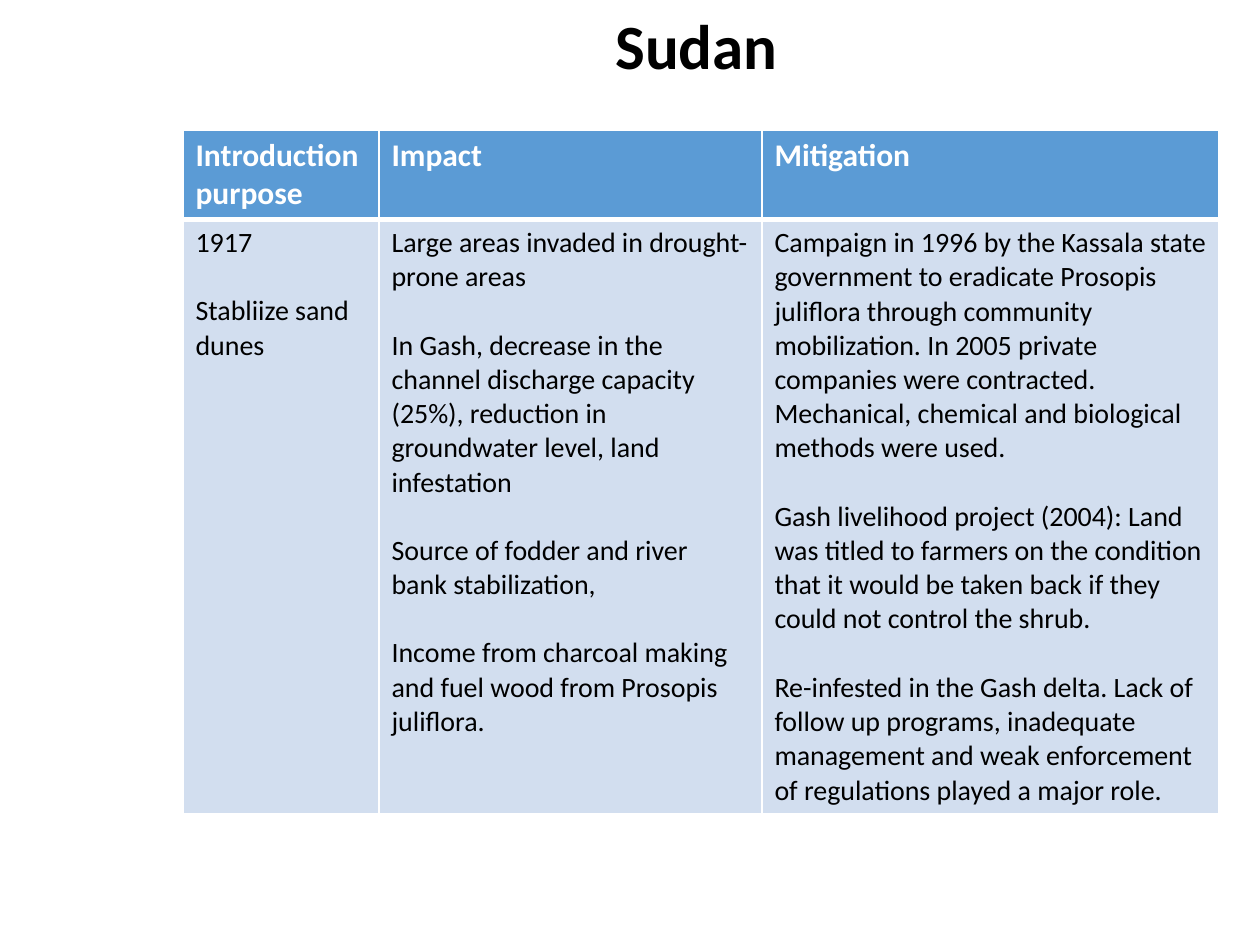
from lxml.etree import SubElement
from pptx import Presentation
from pptx.dml.color import RGBColor
from pptx.enum.text import MSO_ANCHOR as ANCHOR, MSO_AUTO_SIZE as AUTO, PP_ALIGN as ALIGN
from pptx.oxml.ns import qn
from pptx.util import Emu, Pt

PX = 914400 // 126

HEADERS = ["Introduction purpose", "Impact", "Mitigation"]
BODY = [
    ["1917", "Stabliize sand dunes"],
    [
        "Large areas invaded in drought-prone areas",
        "In Gash, decrease in the channel discharge capacity (25%), reduction in "
        "groundwater level, land infestation",
        "Source of fodder and river bank stabilization,",
        "Income from charcoal making and fuel wood from Prosopis juliflora.",
    ],
    [
        "Campaign in 1996 by the Kassala state government to eradicate Prosopis "
        "juliflora through community mobilization. In 2005 private companies were "
        "contracted. Mechanical, chemical and biological methods were used.",
        "Gash livelihood project (2004): Land was titled to farmers on the condition "
        "that it would be taken back if they could not control the shrub.",
        "Re-infested in the Gash delta. Lack of follow up programs, inadequate "
        "management and weak enforcement of regulations played a major role.",
    ],
]


def px(n):
    return Emu(n * PX)


def rgb(color):
    return RGBColor.from_string(color)


class Deck:
    font = "Calibri"
    black, white = "000000", "FFFFFF"
    header_fill, body_fill = "5B9BD5", "D2DEEF"
    paragraph_gap = Pt(19.5)

    def __init__(self, slide):
        self.slide = slide

    def run(self, p, text, size, color, bold=False):
        r = p.add_run()
        r.text = text
        r.font.name, r.font.size, r.font.bold = self.font, Pt(size), bold
        r.font.color.rgb = rgb(color)

    def title(self, text, x, y, w, h):
        sp = self.slide.shapes.title
        sp.left, sp.top, sp.width, sp.height = map(px, (x, y, w, h))
        tf = sp.text_frame
        tf.auto_size, tf.vertical_anchor = AUTO.NONE, ANCHOR.MIDDLE
        p = tf.paragraphs[0]
        p.alignment, p.line_spacing = ALIGN.CENTER, 0.9
        self.run(p, text, 36, self.black, bold=True)

    def borders(self, cell, top, bottom):
        """Draw white cell borders; top and bottom are widths in points."""
        tc_pr = cell._tc.get_or_add_tcPr()
        for side, width in (("L", 1), ("R", 1), ("T", top), ("B", bottom)):
            ln = SubElement(tc_pr, qn(f"a:ln{side}"), w=str(Pt(width)))
            fill = SubElement(ln, qn("a:solidFill"))
            SubElement(fill, qn("a:srgbClr"), val=self.white)

    def cell(self, cell, texts, header):
        if header:
            self.borders(cell, top=1, bottom=3)
        else:
            self.borders(cell, top=3, bottom=1)
        cell.fill.solid()
        cell.fill.fore_color.rgb = rgb(self.header_fill if header else self.body_fill)
        tf = cell.text_frame
        for i, text in enumerate(texts):
            p = tf.add_paragraph() if i else tf.paragraphs[0]
            if i:
                p.space_before = self.paragraph_gap
            if header:
                self.run(p, text, 18, self.white, bold=True)
            else:
                self.run(p, text, 16, self.black)

    def table(self, x, y, widths, heights, rows):
        """Add a table whose first row is the header; each cell is a list of paragraphs."""
        frame = self.slide.shapes.add_table(
            len(heights), len(widths), px(x), px(y), px(sum(widths)), px(sum(heights)))
        table = frame.table
        table.horz_banding = False
        for col, width in zip(table.columns, widths):
            col.width = px(width)
        for i, (height, row) in enumerate(zip(heights, rows)):
            table.rows[i].height = px(height)
            for j, texts in enumerate(row):
                self.cell(table.cell(i, j), texts, header=i == 0)


def main():
    prs = Presentation()
    prs.slide_width, prs.slide_height = px(1260), px(945)
    deck = Deck(prs.slides.add_slide(prs.slide_layouts[5]))
    deck.table(183, 130, [196, 383, 457], [89, 594], [[[h] for h in HEADERS], BODY])
    deck.title("Sudan", 173, -42, 1047, 183)
    prs.save("out.pptx")


if __name__ == "__main__":
    main()
